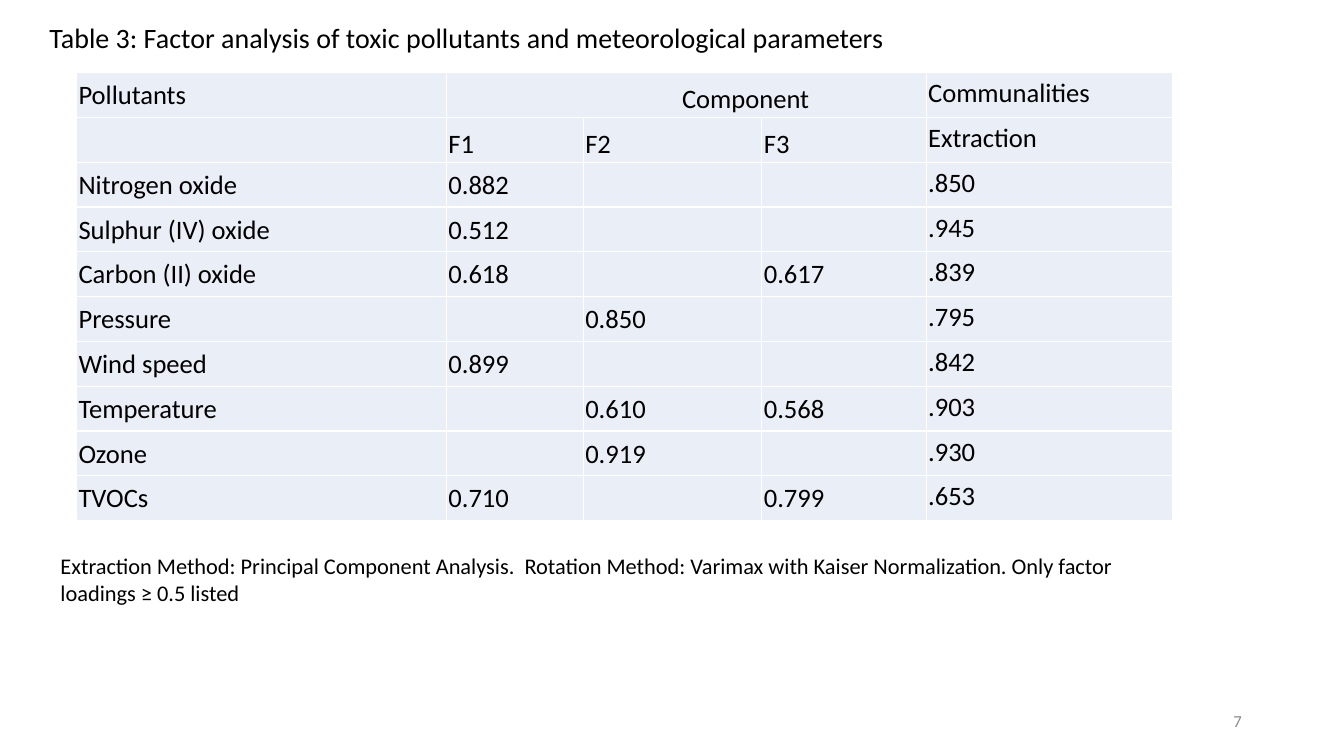
import pptx
import pptx.dml.color
import pptx.enum.text
import pptx.oxml
import pptx.oxml.ns
import pptx.util

Cm = pptx.util.Cm
Align = pptx.enum.text.PP_ALIGN
Anchor = pptx.enum.text.MSO_ANCHOR

BLACK = pptx.dml.color.RGBColor(0x00, 0x00, 0x00)
GREY = pptx.dml.color.RGBColor(0x8C, 0x8C, 0x8C)
WHITE = pptx.dml.color.RGBColor(0xFF, 0xFF, 0xFF)
PALE_BLUE = pptx.dml.color.RGBColor(0xEA, 0xEF, 0xF7)
FONT = "Calibri"

CAPTION = "Table 3: Factor analysis of toxic pollutants and meteorological parameters"
METHOD = ("Extraction Method: Principal Component Analysis.  Rotation Method: "
          "Varimax with Kaiser Normalization. Only factor loadings ≥ 0.5 listed")
PAGE = "7"
FACTORS = [
    ("Pollutants", "Component", "", "", "Communalities"),
    ("", "F1", "F2", "F3", "Extraction"),
    ("Nitrogen oxide", "0.882", "", "", ".850"),
    ("Sulphur (IV) oxide", "0.512", "", "", ".945"),
    ("Carbon (II) oxide", "0.618", "", "0.617", ".839"),
    ("Pressure", "", "0.850", "", ".795"),
    ("Wind speed", "0.899", "", "", ".842"),
    ("Temperature", "", "0.610", "0.568", ".903"),
    ("Ozone", "", "0.919", "", ".930"),
    ("TVOCs", "0.710", "", "0.799", ".653"),
]
COLUMN_WIDTHS = (9.32, 3.45, 4.5, 4.14, 6.22)
ROW_HEIGHT = 1.13
HEADER_ROWS = 2
COMMUNALITIES = len(COLUMN_WIDTHS) - 1
COMPONENT_INDENT = 5.89


def write(paragraph, text, size, color=BLACK, align=Align.LEFT):
    """Add one formatted run to a paragraph."""
    paragraph.alignment = align
    run = paragraph.add_run()
    run.text = text
    run.font.name = FONT
    run.font.size = pptx.util.Pt(size)
    run.font.color.rgb = color


def place(holder, left, top, width, height, anchor):
    """Move a text holder and return its first paragraph."""
    holder.left, holder.top, holder.width, holder.height = map(Cm, (left, top, width, height))
    holder.text_frame.word_wrap = True
    holder.text_frame.vertical_anchor = anchor
    return holder.text_frame.paragraphs[0]


def outline(cell):
    """Draw thin white borders round a cell."""
    properties = cell._tc.get_or_add_tcPr()
    for index, side in enumerate(("lnL", "lnR", "lnT", "lnB")):
        properties.insert(index, pptx.oxml.parse_xml(
            f'<a:{side} {pptx.oxml.ns.nsdecls("a")} w="12700"><a:solidFill>'
            f'<a:srgbClr val="{WHITE}"/></a:solidFill></a:{side}>'))


def fill_cell(cell, text, row, column):
    """Format one table cell and write its text."""
    cell.fill.solid()
    cell.fill.fore_color.rgb = PALE_BLUE
    outline(cell)
    cell.margin_left = cell.margin_right = Cm(0.05)
    cell.margin_top = cell.margin_bottom = Cm(0 if column == COMMUNALITIES else 0.05)
    is_factor_header = row < HEADER_ROWS and 0 < column < COMMUNALITIES
    cell.vertical_anchor = Anchor.BOTTOM if is_factor_header else Anchor.TOP
    if text:
        paragraph = cell.text_frame.paragraphs[0]
        paragraph.line_spacing = 1.15
        write(paragraph, text, 19, align=Align.JUSTIFY)


def add_factor_table(slide):
    """Build the factor loading table."""
    frame = slide.shapes.add_table(
        len(FACTORS), len(COLUMN_WIDTHS), Cm(1.93), Cm(1.83),
        Cm(sum(COLUMN_WIDTHS)), Cm(ROW_HEIGHT * len(FACTORS)))
    table = frame.table
    table.first_row = table.horz_banding = False
    for column, width in zip(table.columns, COLUMN_WIDTHS):
        column.width = Cm(width)
    for row, values in enumerate(FACTORS):
        table.rows[row].height = Cm(ROW_HEIGHT)
        for column, text in enumerate(values):
            fill_cell(table.cell(row, column), text, row, column)
    component = table.cell(0, 1)
    component.merge(table.cell(0, COMMUNALITIES - 1))
    component.text_frame.paragraphs[0]._p.get_or_add_pPr().set(
        "marL", str(Cm(COMPONENT_INDENT)))


def main():
    """Build the slide and save it."""
    deck = pptx.Presentation()
    deck.slide_width, deck.slide_height = Cm(33.87), Cm(19.05)
    slide = deck.slides.add_slide(deck.slide_layouts[0])
    add_factor_table(slide)
    method = place(slide.placeholders[1], 1.27, 13.77, 28.98, 1.63, Anchor.MIDDLE)
    method.space_before = pptx.util.Pt(0)
    write(method, METHOD, 16)
    caption = place(slide.shapes.title, 0.99, 0.38, 22.1, 1.88, Anchor.TOP)
    write(caption, CAPTION, 20)
    page_box = slide.shapes.add_textbox(0, 0, 0, 0)
    page = place(page_box, 23.93, 17.65, 7.62, 1.02, Anchor.MIDDLE)
    write(page, PAGE, 12, GREY, Align.RIGHT)
    deck.save("out.pptx")


if __name__ == "__main__":
    main()
